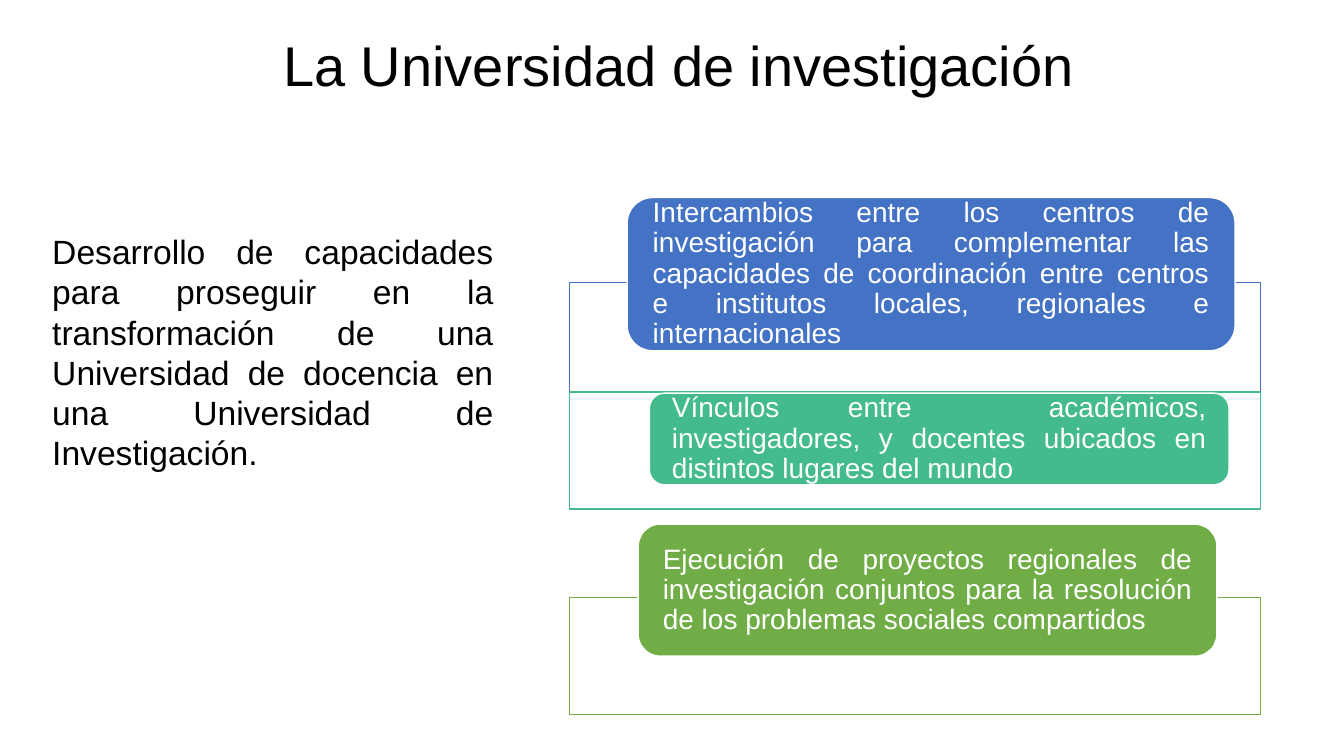
import pptx
import pptx.util
import pptx.dml.color
import pptx.enum.shapes
import pptx.enum.text
import pptx.oxml
import pptx.oxml.ns

Inches = pptx.util.Inches
SHAPE = pptx.enum.shapes.MSO_SHAPE
ALIGN = pptx.enum.text.PP_ALIGN
COLORS = {"black": "000000", "white": "FFFFFF", "blue": "4472C4",
          "teal": "43BB8D", "green": "70AD47"}
CARD_FRAME = {"word_wrap": True, "vertical_anchor": pptx.enum.text.MSO_ANCHOR.MIDDLE,
              "margin_left": Inches(0.18), "margin_right": Inches(0.18),
              "margin_top": 0, "margin_bottom": 0}
BOX_FRAME = {"word_wrap": True, "auto_size": pptx.enum.text.MSO_AUTO_SIZE.SHAPE_TO_FIT_TEXT}
PANEL_HEIGHT = 1.16
GOALS = [
    ("blue", 0.84, (0.57, 0, 6.03, 1.52),
     "Intercambios entre los centros de investigación para complementar las capacidades "
     "de coordinación entre centros e institutos locales, regionales e internacionales"),
    ("teal", 1.93, (0.79, 1.94, 5.75, 0.91),
     "Vínculos entre  académicos, investigadores, y docentes ubicados en distintos "
     "lugares del mundo"),
    ("green", 3.97, (0.68, 3.24, 5.74, 1.31),
     "Ejecución de proyectos regionales de investigación conjuntos para la resolución "
     "de los problemas sociales compartidos"),
]


def rgb(name):
    """Return the named palette colour."""
    return pptx.dml.color.RGBColor.from_string(COLORS[name])


def set_attrs(obj, values):
    """Set every attribute in a dict of format values."""
    for name, value in values.items():
        setattr(obj, name, value)


def write_text(sp, text, size, color, frame, para):
    """Write one formatted paragraph into a shape."""
    tf = sp.text_frame
    set_attrs(tf, frame)
    p = tf.paragraphs[0]
    set_attrs(p, para)
    r = p.add_run()
    r.text = text
    set_attrs(r.font, {"name": "Arial", "size": pptx.util.Pt(size)})
    r.font.color.rgb = rgb(color)


def add_box(s, kind, box, fill, line):
    """Add a filled and outlined shape."""
    sp = s.shapes.add_shape(kind, *map(Inches, box))
    sp.shadow.inherit = False
    sp.fill.solid()
    sp.fill.fore_color.rgb = rgb(fill)
    sp.line.color.rgb = rgb(line)
    sp.line.width = pptx.util.Pt(1)
    return sp


def add_text(s, box, text, size, align):
    """Add a text box with black text."""
    sp = s.shapes.add_textbox(*map(Inches, box))
    write_text(sp, text, size, "black", BOX_FRAME, {"alignment": align})


def add_panel(s, box, color):
    """Add a slightly transparent white panel with a coloured outline."""
    sp = add_box(s, SHAPE.RECTANGLE, box, "white", color)
    clr = sp.fill._xPr.find(".//" + pptx.oxml.ns.qn("a:srgbClr"))
    clr.append(pptx.oxml.parse_xml(
        f'<a:alpha {pptx.oxml.ns.nsdecls("a")} val="90000"/>'))


def add_goals(s, box):
    """Place the goal panels and their cards in the given box."""
    left, top, width, _ = box
    for color, panel_top, (x, y, w, h), text in GOALS:
        add_panel(s, (left, top + panel_top, width, PANEL_HEIGHT), color)
        sp = add_box(s, SHAPE.ROUNDED_RECTANGLE, (left + x, top + y, w, h), color, "white")
        write_text(sp, text, 20, "white", CARD_FRAME,
                   {"alignment": ALIGN.JUSTIFY, "line_spacing": 0.9})


def build_slide(prs):
    """Build the research university slide."""
    s = prs.slides.add_slide(prs.slide_layouts[6])
    add_text(s, (2.71, 0.25, 8.58, 0.77), "La Universidad de investigación", 40, ALIGN.LEFT)
    add_text(s, (0.42, 2.24, 4.57, 2.12),
             "Desarrollo de capacidades para proseguir en la transformación de una "
             "Universidad de docencia en una Universidad de Investigación.",
             24, ALIGN.JUSTIFY)
    add_goals(s, (5.65, 1.96, 6.85, 5.13))


def main():
    """Create and save the presentation."""
    prs = pptx.Presentation()
    set_attrs(prs, {"slide_width": Inches(13.33), "slide_height": Inches(7.5)})
    build_slide(prs)
    prs.save("out.pptx")


if __name__ == "__main__":
    main()
